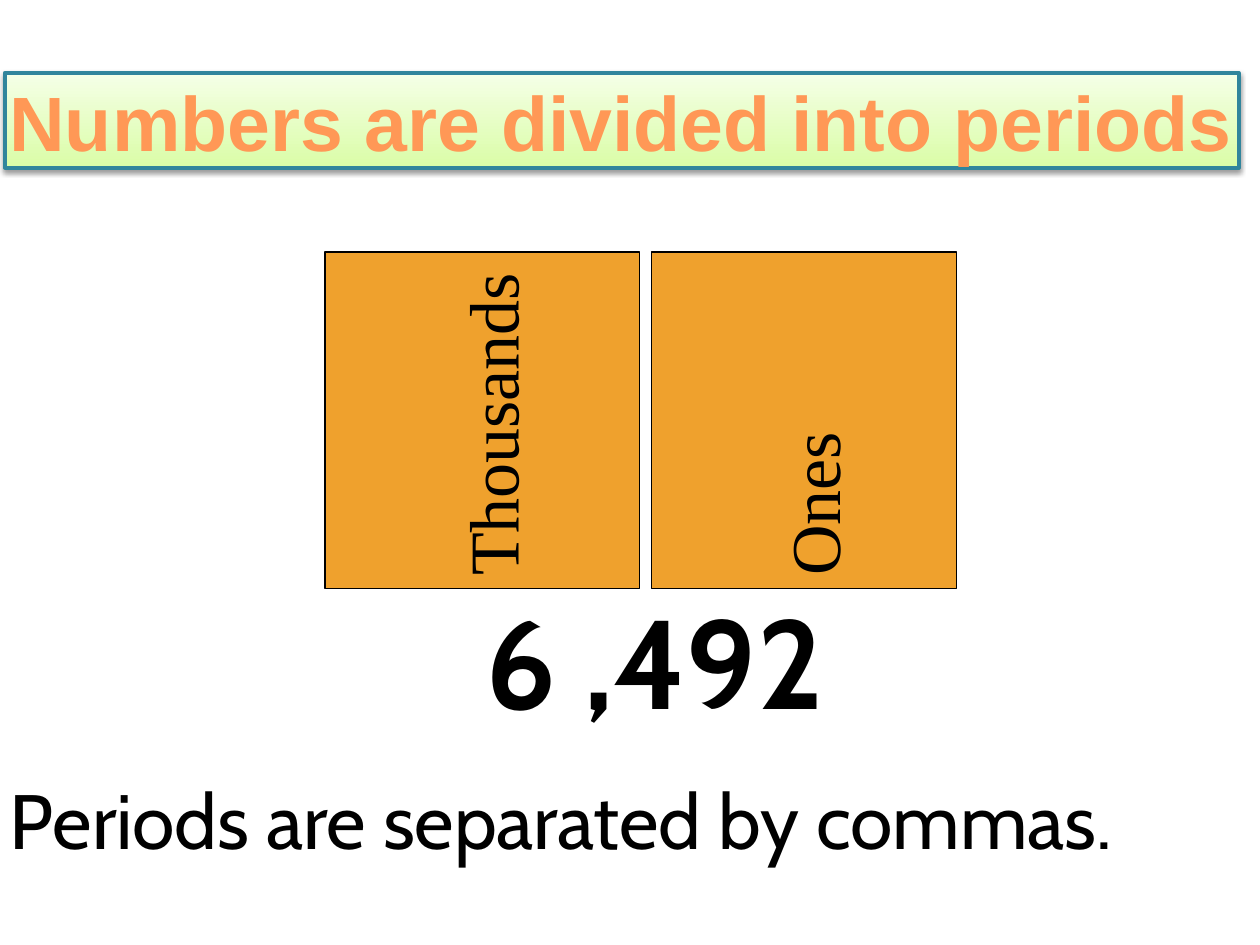
import pptx
import pptx.dml.color
import pptx.enum.shapes
import pptx.enum.text
import pptx.oxml
import pptx.oxml.ns
import pptx.util
from pptx.util import Cm

ALIGN = pptx.enum.text.PP_ALIGN
ANCHOR = pptx.enum.text.MSO_ANCHOR
BLACK = "000000"


def color(hex_code):
    return pptx.dml.color.RGBColor.from_string(hex_code)


def add_box(page, left, top, width, height, line_color, line_width):
    box = page.shapes.add_shape(
        pptx.enum.shapes.MSO_SHAPE.RECTANGLE,
        Cm(left), Cm(top), Cm(width), Cm(height))
    box.shadow.inherit = False
    box.line.color.rgb = color(line_color)
    box.line.width = pptx.util.Pt(line_width)
    return box


def write(box, spans, font, size, hex_code=BLACK, bold=False,
          align=ALIGN.LEFT, anchor=ANCHOR.TOP, before=1):
    """Write one paragraph; each span is its text and letter spacing in points."""
    frame = box.text_frame
    frame.word_wrap = True
    frame.vertical_anchor = anchor
    frame.margin_left = frame.margin_right = frame.margin_bottom = 0
    frame.margin_top = Cm(0.03)
    para = frame.paragraphs[0]
    para.alignment = align
    para.space_before = pptx.util.Pt(before)
    for text, spacing in spans:
        span = para.add_run()
        span.text = text
        span.font.name = font
        span.font.size = pptx.util.Pt(size)
        span.font.bold = bold
        span.font.color.rgb = color(hex_code)
        if spacing:
            span.font._element.set("spc", str(round(spacing * 100)))


def add_text(page, left, top, width, height, spans, size, bold=False):
    box = page.shapes.add_textbox(Cm(left), Cm(top), Cm(width), Cm(height))
    write(box, spans, "Cabin", size, bold=bold)


def add_soft_shadow(box):
    effects = box._element.spPr.find(pptx.oxml.ns.qn("a:effectLst"))
    effects.append(pptx.oxml.parse_xml(
        f'<a:outerShdw {pptx.oxml.ns.nsdecls("a")} blurRad="39370" dist="20320" '
        'dir="5400000" rotWithShape="0"><a:srgbClr val="000000">'
        '<a:alpha val="38000"/></a:srgbClr></a:outerShdw>'))


def add_title(page, text):
    box = add_box(page, 0.1, 1.47, 24.87, 1.91, "31859C", 2.25)
    box.fill.gradient()
    box.fill.gradient_angle = 90
    for stop, hex_code in zip(box.fill.gradient_stops, ("DAFDA7", "F5FFE7")):
        stop.color.rgb = color(hex_code)
    add_soft_shadow(box)
    write(box, [(text, 0)], "Arial", 44, "FF9856", True,
          ALIGN.CENTER, ANCHOR.MIDDLE)


def add_period(page, left, width, name, spacing):
    box = add_box(page, left, 5.08, width, 6.78, BLACK, 0.75)
    box.fill.solid()
    box.fill.fore_color.rgb = color("EFA12D")
    write(box, [(name, spacing)], "Times New Roman", 40,
          anchor=ANCHOR.MIDDLE, before=0)
    # The name reads upwards, a little right of the middle
    frame = box.text_frame
    frame.margin_left = Cm(0.33)
    frame._txBody.bodyPr.set("vert", "vert270")
    frame.paragraphs[0]._p.get_or_add_pPr().set("marL", str(Cm(0.25)))


def main():
    deck = pptx.Presentation()
    deck.slide_width, deck.slide_height = Cm(25.4), Cm(19.05)
    page = deck.slides.add_slide(deck.slide_layouts[6])

    # Heading
    add_title(page, "Numbers are divided into periods")

    # Example number under its two periods
    add_text(page, 9.78, 11.73, 8.08, 3.12,
             [("6 ", 0), (",492", -0.1)], 72, bold=True)
    add_period(page, 6.55, 6.35, "Thousands", 0)
    add_period(page, 13.13, 6.15, "Ones", -0.1)

    # Rule
    add_text(page, 0.2, 15.54, 23.7, 1.93,
             [("Periods are separated ", -0.1), ("by ", 0), ("commas.", -0.1)], 44)

    deck.save("out.pptx")


if __name__ == "__main__":
    main()
